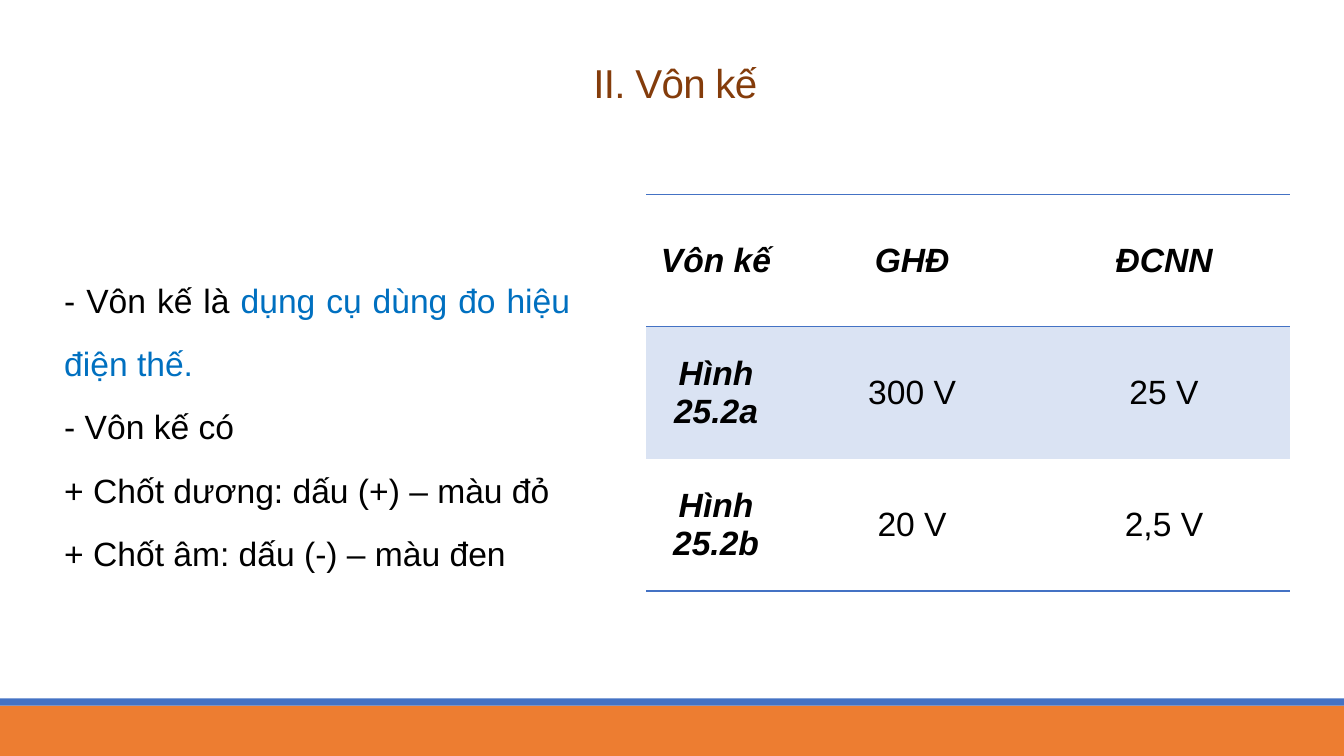
from dataclasses import dataclass

from lxml.etree import SubElement
from pptx import Presentation
from pptx.dml.color import RGBColor
from pptx.enum.shapes import MSO_SHAPE as Preset
from pptx.enum.text import MSO_ANCHOR as Anchor, PP_ALIGN as Align
from pptx.oxml.ns import qn
from pptx.slide import Slide
from pptx.table import _Cell as Cell
from pptx.util import Cm, Pt


@dataclass(frozen=True)
class Theme:
    font: str = "Arial"
    title_size: float = 28.8
    text_size: float = 24
    title: str = "843C0B"
    text: str = "000000"
    answer: str = "0070C0"
    rule: str = "4472C4"
    band: str = "DAE3F3"
    footer: str = "ED7D31"


@dataclass(frozen=True)
class Bar:
    top: float
    height: float
    color: str


@dataclass(frozen=True)
class Note:
    lead: str
    answer: str = ""


@dataclass(frozen=True)
class Meter:
    name: str
    limit: str
    division: str
    heading: bool = False
    banded: bool = False
    rules: tuple[str, ...] = ()


THEME = Theme()
WIDTH, HEIGHT = 33.87, 19.05
BARS = (Bar(17.78, 1.27, THEME.footer), Bar(17.6, 0.18, THEME.rule))
NOTES = (
    Note("- Vôn kế là ", "dụng cụ dùng đo hiệu điện thế."),
    Note("- Vôn kế có"),
    Note("+ Chốt dương: dấu (+) – màu đỏ"),
    Note("+ Chốt âm: dấu (-) – màu đen"),
)
METERS = (
    Meter("Vôn kế", "GHĐ", "ĐCNN", heading=True, rules=("lnT", "lnB")),
    Meter("Hình 25.2a", "300 V", "25 V", banded=True, rules=("lnT",)),
    Meter("Hình 25.2b", "20 V", "2,5 V", rules=("lnB",)),
)
COLUMNS = (3.53, 6.35, 6.35)
ROW_HEIGHT = 3.33


def style_run(run, size: float, color: str, strong: bool = False) -> None:
    """Apply the theme font with a size, colour and emphasis."""
    run.font.name = THEME.font
    run.font.size = Pt(size)
    run.font.color.rgb = RGBColor.from_string(color)
    run.font.bold = run.font.italic = strong


def draw_bar(slide: Slide, bar: Bar) -> None:
    """Draw a full-width footer bar."""
    stripe = slide.shapes.add_shape(Preset.RECTANGLE, 0, Cm(bar.top), Cm(WIDTH), Cm(bar.height))
    stripe.shadow.inherit = False
    stripe.fill.solid()
    stripe.fill.fore_color.rgb = RGBColor.from_string(bar.color)
    stripe.line.fill.background()


def draw_title(slide: Slide, wording: str) -> None:
    """Place and format the title placeholder."""
    title = slide.shapes.title
    title.left, title.top, title.width, title.height = Cm(3.05), Cm(0.79), Cm(27.94), Cm(1.96)
    title.text_frame.text = wording
    title.text_frame.vertical_anchor = Anchor.MIDDLE
    heading = title.text_frame.paragraphs[0]
    heading.alignment = Align.CENTER
    heading.line_spacing = 1.5
    style_run(heading.runs[0], THEME.title_size, THEME.title)
    heading.runs[0].font._element.set("spc", "-50")


def draw_notes(slide: Slide, notes: tuple[Note, ...]) -> None:
    """Write the notes with their highlighted answers."""
    frame = slide.shapes.add_textbox(Cm(1.37), Cm(3.94), Cm(13), Cm(13.03)).text_frame
    frame.word_wrap = True
    frame.vertical_anchor = Anchor.MIDDLE
    frame.margin_left, frame.margin_right = Cm(0.25), 0
    frame.text = "\n".join(note.lead for note in notes)
    for paragraph, note in zip(frame.paragraphs, notes):
        paragraph.alignment = Align.JUSTIFY
        paragraph.line_spacing = 1.57
        style_run(paragraph.runs[0], THEME.text_size, THEME.text)
        if note.answer:
            answer = paragraph.add_run()
            answer.text = note.answer
            style_run(answer, THEME.text_size, THEME.answer)


def rule_cell(cell: Cell, rules: tuple[str, ...]) -> None:
    """Draw the named borders of a cell and clear the others."""
    properties = cell._tc.get_or_add_tcPr()
    for side in ("lnL", "lnR", "lnT", "lnB"):
        border = SubElement(properties, qn(f"a:{side}"), w=str(Pt(1)))
        if side in rules:
            paint = SubElement(border, qn("a:solidFill"))
            SubElement(paint, qn("a:srgbClr"), val=THEME.rule)
        else:
            SubElement(border, qn("a:noFill"))


def fill_cell(cell: Cell, wording: str, meter: Meter, strong: bool) -> None:
    """Write and format one table cell."""
    rule_cell(cell, meter.rules)
    if meter.banded:
        cell.fill.solid()
        cell.fill.fore_color.rgb = RGBColor.from_string(THEME.band)
    else:
        cell.fill.background()
    cell.vertical_anchor = Anchor.MIDDLE
    cell.margin_left = cell.margin_right = Cm(0.18)
    cell.margin_top = cell.margin_bottom = 0
    cell.text_frame.text = wording
    paragraph = cell.text_frame.paragraphs[0]
    paragraph.alignment = Align.CENTER
    paragraph.space_before = paragraph.space_after = Pt(6)
    style_run(paragraph.runs[0], THEME.text_size, THEME.text, strong)


def draw_meters(slide: Slide, meters: tuple[Meter, ...]) -> None:
    """Draw the table of voltmeter ranges."""
    table = slide.shapes.add_table(
        len(meters), len(COLUMNS), Cm(16.28), Cm(4.9),
        Cm(sum(COLUMNS)), Cm(ROW_HEIGHT * len(meters)),
    ).table
    table.first_row = table.horz_banding = False
    for column, width in zip(table.columns, COLUMNS):
        column.width = Cm(width)
    for row, meter in zip(table.rows, meters):
        row.height = Cm(ROW_HEIGHT)
        for index, wording in enumerate((meter.name, meter.limit, meter.division)):
            fill_cell(row.cells[index], wording, meter, meter.heading or index == 0)


def main() -> None:
    """Build and save the voltmeter slide."""
    deck = Presentation()
    deck.slide_width, deck.slide_height = Cm(WIDTH), Cm(HEIGHT)
    slide = deck.slides.add_slide(deck.slide_layouts.get_by_name("Title Only"))
    for bar in BARS:
        draw_bar(slide, bar)
    draw_title(slide, "II. Vôn kế")
    draw_notes(slide, NOTES)
    draw_meters(slide, METERS)
    deck.save("out.pptx")


if __name__ == "__main__":
    main()
